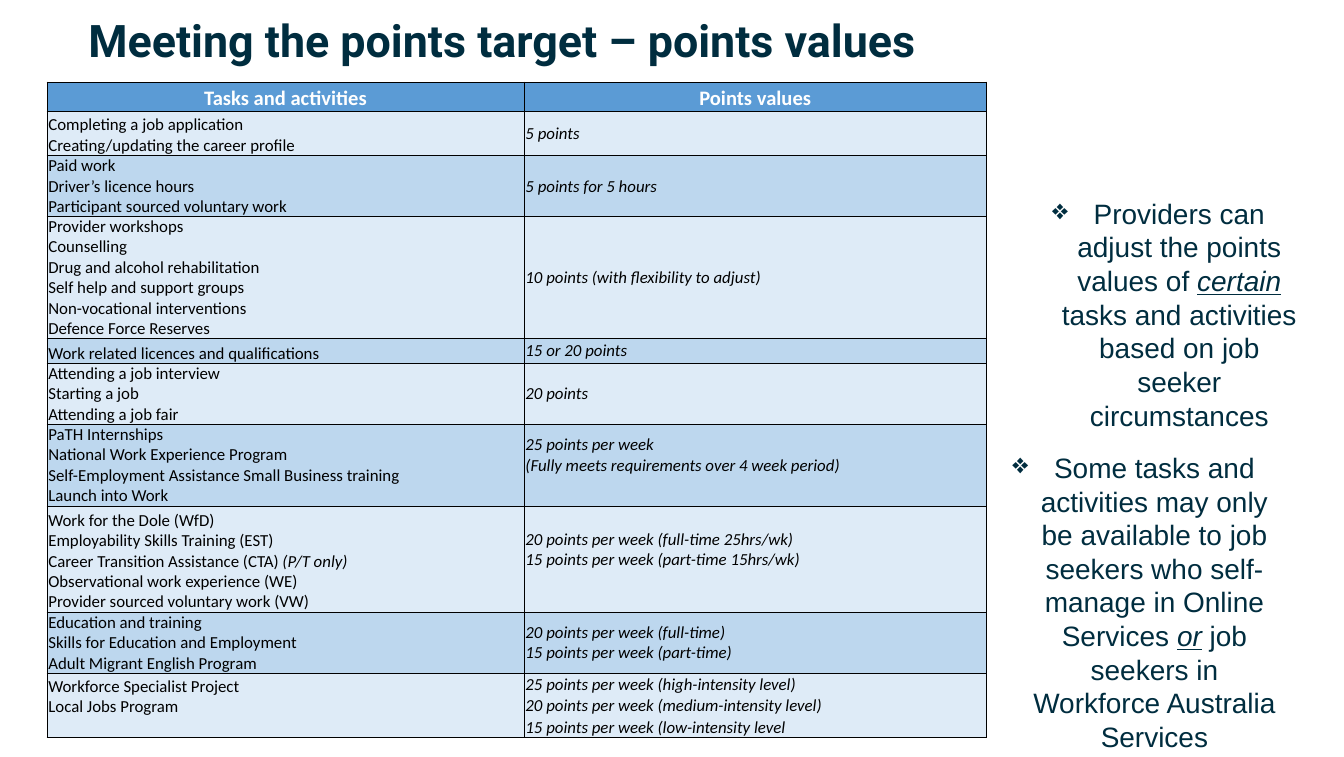
"""Build the slide on points values for tasks and activities."""
from pptx import Presentation, util as u
from pptx.dml.color import RGBColor
from pptx.enum import text
from pptx.oxml import parse_xml
from pptx.oxml.ns import nsdecls

NAVY = RGBColor(0x00, 0x2D, 0x3F)
WHITE = RGBColor(0xFF, 0xFF, 0xFF)
BLACK = RGBColor(0x00, 0x00, 0x00)
HEADER_BLUE = RGBColor(0x5B, 0x9B, 0xD5)
PALE_BLUE = RGBColor(0xDE, 0xEB, 0xF7)
MID_BLUE = RGBColor(0xBD, 0xD7, 0xEE)

COLUMN_WIDTHS = (3.55, 3.44)
ROW_HEIGHTS = (0.22, 0.33, 0.45, 0.89, 0.19, 0.45, 0.61, 0.79, 0.45, 0.46)
ROWS = (
    (["Tasks and activities"], ["Points values"]),
    (["Completing a job application", "Creating/updating the career profile"],
     ["5 points"]),
    (["Paid work", "Driver’s licence hours", "Participant sourced voluntary work"],
     ["5 points for 5 hours"]),
    (["Provider workshops", "Counselling", "Drug and alcohol rehabilitation",
      "Self help and support groups", "Non-vocational interventions",
      "Defence Force Reserves"],
     ["10 points (with flexibility to adjust)"]),
    (["Work related licences and qualifications"], ["15 or 20 points"]),
    (["Attending a job interview", "Starting a job", "Attending a job fair"],
     ["20 points"]),
    (["PaTH Internships", "National Work Experience Program",
      "Self-Employment Assistance Small Business training", "Launch into Work"],
     ["25 points per week", "(Fully meets requirements over 4 week period)"]),
    (["Work for the Dole (WfD)", "Employability Skills Training (EST)",
      ("Career Transition Assistance (CTA) ", "(P/T only)"),
      "Observational work experience (WE)", "Provider sourced voluntary work (VW)"],
     ["20 points per week (full-time 25hrs/wk)",
      "15 points per week (part-time 15hrs/wk)"]),
    (["Education and training", "Skills for Education and Employment",
      "Adult Migrant English Program"],
     ["20 points per week (full-time)", "15 points per week (part-time)"]),
    (["Workforce Specialist Project", "Local Jobs Program"],
     ["25 points per week (high-intensity level)",
      "20 points per week (medium-intensity level)",
      "15 points per week (low-intensity level"]),
)
BOTTOM_MARGINS = {(6, 1): 0.15, (7, 1): 0.14, (9, 0): 0.15}
LAST_ROW = len(ROWS) - 1

NOTES = (
    ((7.47, 1.22, 2.3, 1.99),
     ("Providers can adjust the points values of ", "certain",
      " tasks and activities based on job seeker circumstances")),
    ((7.23, 3.11, 2.41, 2.49),
     ("Some tasks and activities may only be available to job seekers who "
      "self-manage in Online Services ", "or",
      " job seekers in Workforce Australia Services")),
)


def set_font(para, name, size, color, bold=False):
    """Set the font shared by all runs of a paragraph."""
    para.font.name = name
    para.font.size = u.Pt(size)
    para.font.color.rgb = color
    para.font.bold = bold


def add_spans(para, spans, underline=False):
    """Write spans in turn, emphasising every second one."""
    for index, words in enumerate(spans):
        span = para.add_run()
        span.text = words
        if index % 2:
            span.font.italic = True
            if underline:
                span.font.underline = True


def add_box(page, place):
    """Add a wrapping text box and return its text frame."""
    frame = page.shapes.add_textbox(*map(u.Inches, place)).text_frame
    frame.word_wrap = True
    return frame


def add_title(page, words):
    """Add the slide heading."""
    frame = add_box(page, (0.56, -0.18, 6.78, 1))
    frame.vertical_anchor = text.MSO_ANCHOR.MIDDLE
    para = frame.paragraphs[0]
    para.text = words
    para.line_spacing = 0.9
    set_font(para, "Roboto", 24, NAVY, bold=True)


def add_borders(cell):
    """Draw thin black lines on all four sides of a cell."""
    properties = cell._tc.get_or_add_tcPr()
    for side in ("lnL", "lnR", "lnT", "lnB"):
        properties.append(parse_xml(
            f'<a:{side} {nsdecls("a")} w="{u.Pt(0.5)}"><a:solidFill>'
            f'<a:srgbClr val="{BLACK}"/></a:solidFill></a:{side}>'))


def fill_cell(cell, lines, row, column):
    """Write and style one cell of the points table."""
    header = row == 0
    values = column == 1 and not header
    add_borders(cell)
    cell.fill.solid()
    cell.fill.fore_color.rgb = HEADER_BLUE if header else PALE_BLUE if row % 2 else MID_BLUE
    cell.margin_left = cell.margin_right = u.Inches(0.01)
    cell.margin_top = u.Inches(0)
    cell.margin_bottom = u.Inches(BOTTOM_MARGINS.get((row, column), 0))
    cell.vertical_anchor = text.MSO_ANCHOR.MIDDLE if values else text.MSO_ANCHOR.BOTTOM
    frame = cell.text_frame
    for index, line in enumerate(lines):
        para = frame.add_paragraph() if index else frame.paragraphs[0]
        add_spans(para, (line,) if isinstance(line, str) else line)
        set_font(para, "Calibri", 11 if header else 9, WHITE if header else BLACK, header)
        if header:
            para.alignment = text.PP_ALIGN.CENTER
        if values:
            para.font.italic = True
            if row == LAST_ROW:
                para.line_spacing = 1.06


def add_points_table(page):
    """Add the table of activities and their points."""
    place = (0.35, 0.61, sum(COLUMN_WIDTHS), sum(ROW_HEIGHTS))
    table = page.shapes.add_table(
        len(ROWS), len(COLUMN_WIDTHS), *map(u.Inches, place)).table
    for column, width in zip(table.columns, COLUMN_WIDTHS):
        column.width = u.Inches(width)
    for row, (height, entries) in enumerate(zip(ROW_HEIGHTS, ROWS)):
        table.rows[row].height = u.Inches(height)
        for column, lines in enumerate(entries):
            fill_cell(table.cell(row, column), lines, row, column)


def add_note(page, place, spans):
    """Add a centred side note with a diamond bullet."""
    frame = add_box(page, place)
    frame.auto_size = text.MSO_AUTO_SIZE.SHAPE_TO_FIT_TEXT
    frame.margin_top = u.Inches(0.24)
    frame.margin_bottom = u.Inches(0)
    para = frame.paragraphs[0]
    para.alignment = text.PP_ALIGN.CENTER
    properties = para._p.get_or_add_pPr()
    properties.set("marL", str(u.Inches(0.31)))
    properties.set("indent", str(u.Inches(-0.31)))
    properties.append(parse_xml(f'<a:buChar {nsdecls("a")} char="❖"/>'))
    add_spans(para, spans, underline=True)
    set_font(para, "Arial", 15, NAVY)


def main():
    """Build and save the deck."""
    deck = Presentation()
    deck.slide_width, deck.slide_height = u.Inches(10), u.Inches(5.63)
    page = deck.slides.add_slide(deck.slide_layouts[6])
    add_title(page, "Meeting the points target – points values")
    add_points_table(page)
    for place, spans in NOTES:
        add_note(page, place, spans)
    deck.save("out.pptx")


if __name__ == "__main__":
    main()
